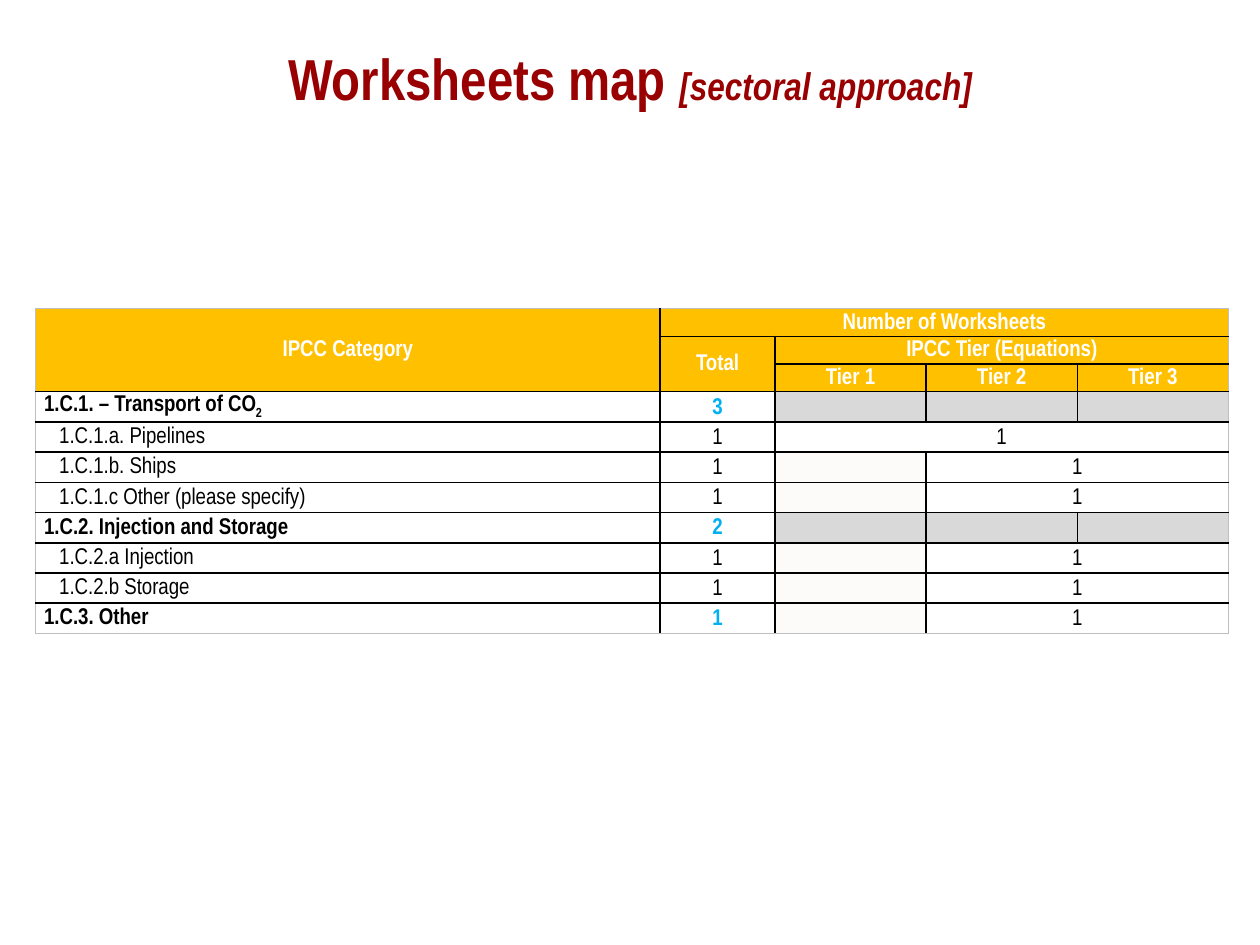
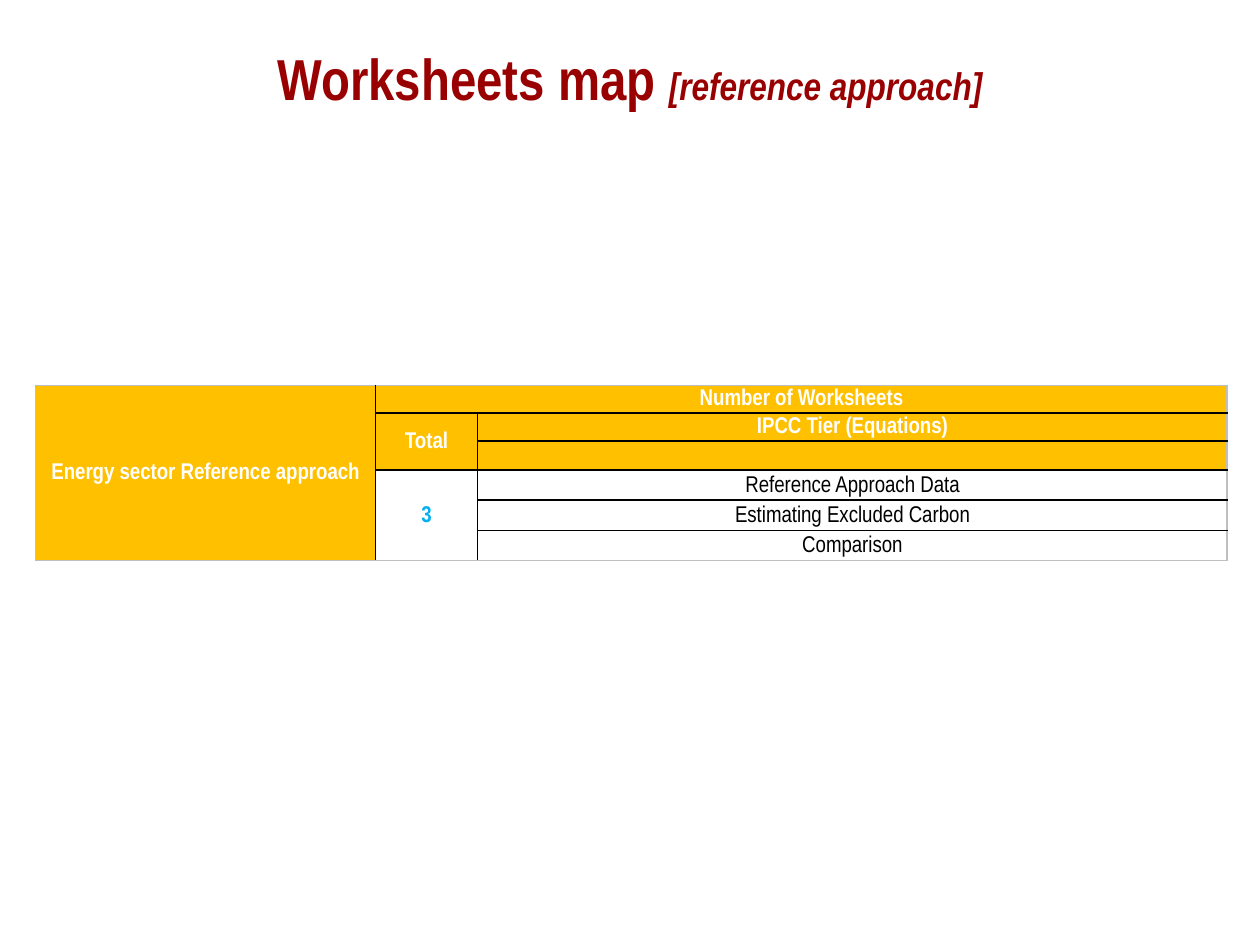
"""Build two worksheet-map slides, each a title above a bordered table."""
from lxml import etree
from pptx import Presentation
from pptx.dml.color import RGBColor
from pptx.enum.text import MSO_ANCHOR, MSO_AUTO_SIZE, PP_ALIGN
from pptx.oxml.ns import qn
from pptx.util import Inches, Pt

FONT = "Arial Narrow"
DARK_RED = RGBColor(0x99, 0x00, 0x02)
AMBER = RGBColor(0xFF, 0xC0, 0x00)
BLUE = RGBColor(0x00, 0xB0, 0xF0)
GREY = RGBColor(0xD9, 0xD9, 0xD9)
PALE = RGBColor(0xFC, 0xFB, 0xF9)
EDGE = RGBColor(0xBF, 0xBF, 0xBF)
BLACK = RGBColor(0x00, 0x00, 0x00)
WHITE = RGBColor(0xFF, 0xFF, 0xFF)
LEFT, CENTER = PP_ALIGN.LEFT, PP_ALIGN.CENTER
TOP, MIDDLE = MSO_ANCHOR.TOP, MSO_ANCHOR.MIDDLE
NO_AUTOFIT = MSO_AUTO_SIZE.NONE

WIDTH, HEIGHT = Inches(10), Inches(7.5)
HEADER_ROWS = 3
HEADER_HEIGHT, BODY_HEIGHT = Inches(0.22), Inches(0.24)
TEXT_SIZE = Pt(13)

MAPS = [
    {
        "approach": "[sectoral approach]",
        "top": Inches(2.45),
        "columns": [4.96, 0.91, 1.2, 1.2, 1.2],
        "header_columns": 0,
        "group_rows": {3, 7, 10},
        "rows": [
            ["IPCC Category", "Number of Worksheets", "", "", ""],
            ["", "Total", "IPCC Tier (Equations)", "", ""],
            ["", "", "Tier 1", "Tier 2", "Tier 3"],
            ["1.C.1. – Transport of CO_2", "3", "", "", ""],
            ["1.C.1.a. Pipelines", "1", "1", "", ""],
            ["1.C.1.b. Ships", "1", "", "1", ""],
            ["1.C.1.c Other (please specify)", "1", "", "1", ""],
            ["1.C.2. Injection and Storage", "2", "", "", ""],
            ["1.C.2.a Injection", "1", "", "1", ""],
            ["1.C.2.b Storage", "1", "", "1", ""],
            ["1.C.3. Other", "1", "", "1", ""],
        ],
        "merges": [(0, 0, 2, 0), (0, 1, 0, 4), (1, 1, 2, 1), (1, 2, 1, 4), (4, 2, 4, 4)]
        + [(row, 3, row, 4) for row in (5, 6, 8, 9, 10)],
    },
    {
        "approach": "[reference approach]",
        "top": Inches(3.06),
        "columns": [2.7, 0.81, 5.95],
        "header_columns": 1,
        "group_rows": {3},
        "rows": [
            ["Energy sector Reference approach", "Number of Worksheets", ""],
            ["", "Total", "IPCC Tier (Equations)"],
            ["", "", ""],
            ["", "3", "Reference Approach Data"],
            ["", "", "Estimating Excluded Carbon"],
            ["", "", "Comparison"],
        ],
        "merges": [(0, 0, 5, 0), (0, 1, 0, 2), (1, 1, 2, 1), (3, 1, 5, 1)],
    },
]


def add_run(paragraph, text, **formats):
    run = paragraph.add_run()
    run.text = text
    color = formats.pop("color")
    for name, value in {"name": FONT, **formats}.items():
        setattr(run.font, name, value)
    run.font.color.rgb = color
    return run


def add_borders(cell, colors):
    properties = cell._tc.get_or_add_tcPr()
    for position, (side, color) in enumerate(colors.items()):
        line = etree.Element(qn(f"a:{side}"), w=str(Pt(1)))
        fill = etree.SubElement(line, qn("a:solidFill"))
        etree.SubElement(fill, qn("a:srgbClr"), val=str(color))
        properties.insert(position, line)


deck = Presentation()
deck.slide_width, deck.slide_height = WIDTH, HEIGHT

for sheet_map in MAPS:
    slide = deck.slides.add_slide(deck.slide_layouts[5])
    title = slide.shapes.title
    title_box = {"left": 0, "top": Inches(0.25), "width": WIDTH, "height": Inches(0.59)}
    for name, value in title_box.items():
        setattr(title, name, value)
    frame = title.text_frame
    title_frame = {"auto_size": NO_AUTOFIT, "word_wrap": True, "vertical_anchor": TOP,
                   "margin_top": Inches(0.09), "margin_bottom": 0}
    for name, value in title_frame.items():
        setattr(frame, name, value)
    heading = frame.paragraphs[0]
    heading.alignment = CENTER
    add_run(heading, "Worksheets map ", size=Pt(33), bold=True, color=DARK_RED)
    add_run(heading, sheet_map["approach"], size=Pt(22), bold=True, italic=True, color=DARK_RED)

    rows, columns = sheet_map["rows"], sheet_map["columns"]
    heights = [HEADER_HEIGHT if row < HEADER_ROWS else BODY_HEIGHT for row in range(len(rows))]
    worksheets = slide.shapes.add_table(
        len(rows), len(columns), Inches(0.28), sheet_map["top"],
        Inches(sum(columns)), sum(heights)).table
    worksheets.first_row = worksheets.horz_banding = False
    for column, width in zip(worksheets.columns, columns):
        column.width = Inches(width)
    for row, height in zip(worksheets.rows, heights):
        row.height = height
    for top, left, bottom, right in sheet_map["merges"]:
        worksheets.cell(top, left).merge(worksheets.cell(bottom, right))

    for r, values in enumerate(rows):
        for c, text in enumerate(values):
            cell = worksheets.cell(r, c)
            is_header = r < HEADER_ROWS or c < sheet_map["header_columns"]
            is_group = r in sheet_map["group_rows"]
            is_category = c == 0 and not is_header
            side_margin = 0.07 if is_category else 0.01
            indent = 0.12 if is_category and not is_group else 0
            cell_format = {
                "vertical_anchor": MIDDLE,
                "margin_left": Inches(side_margin + indent),
                "margin_right": Inches(side_margin),
                "margin_top": Inches(0 if is_category else 0.01),
                "margin_bottom": 0,
            }
            for name, value in cell_format.items():
                setattr(cell, name, value)

            if is_header:
                fill_color = AMBER
            elif text or cell.is_spanned:
                fill_color = WHITE
            else:
                fill_color = PALE if any(values[2:]) else GREY
            cell.fill.solid()
            cell.fill.fore_color.rgb = fill_color
            add_borders(cell, {
                "lnL": EDGE if c == 0 else BLACK,
                "lnR": EDGE if c + cell.span_width == len(columns) else BLACK,
                "lnT": EDGE if r == 0 else BLACK,
                "lnB": EDGE if r + cell.span_height == len(rows) else BLACK,
            })

            paragraph = cell.text_frame.paragraphs[0]
            paragraph.alignment = LEFT if is_category else CENTER
            if not text:
                etree.SubElement(paragraph._p, qn("a:endParaRPr"), sz="1300")
                continue
            if not is_header:
                paragraph.line_spacing, paragraph.space_after = 1.07, Pt(8)
            text_color = WHITE if is_header else BLUE if is_group and c == 1 else BLACK
            text_format = {"size": TEXT_SIZE, "color": text_color,
                           "bold": is_header or (is_group and c < 2)}
            stem, _, subscript = text.partition("_")
            add_run(paragraph, stem, **text_format)
            if subscript:
                lowered = add_run(paragraph, subscript, **text_format)
                lowered._r.get_or_add_rPr().set("baseline", "-25000")

deck.save("out.pptx")
